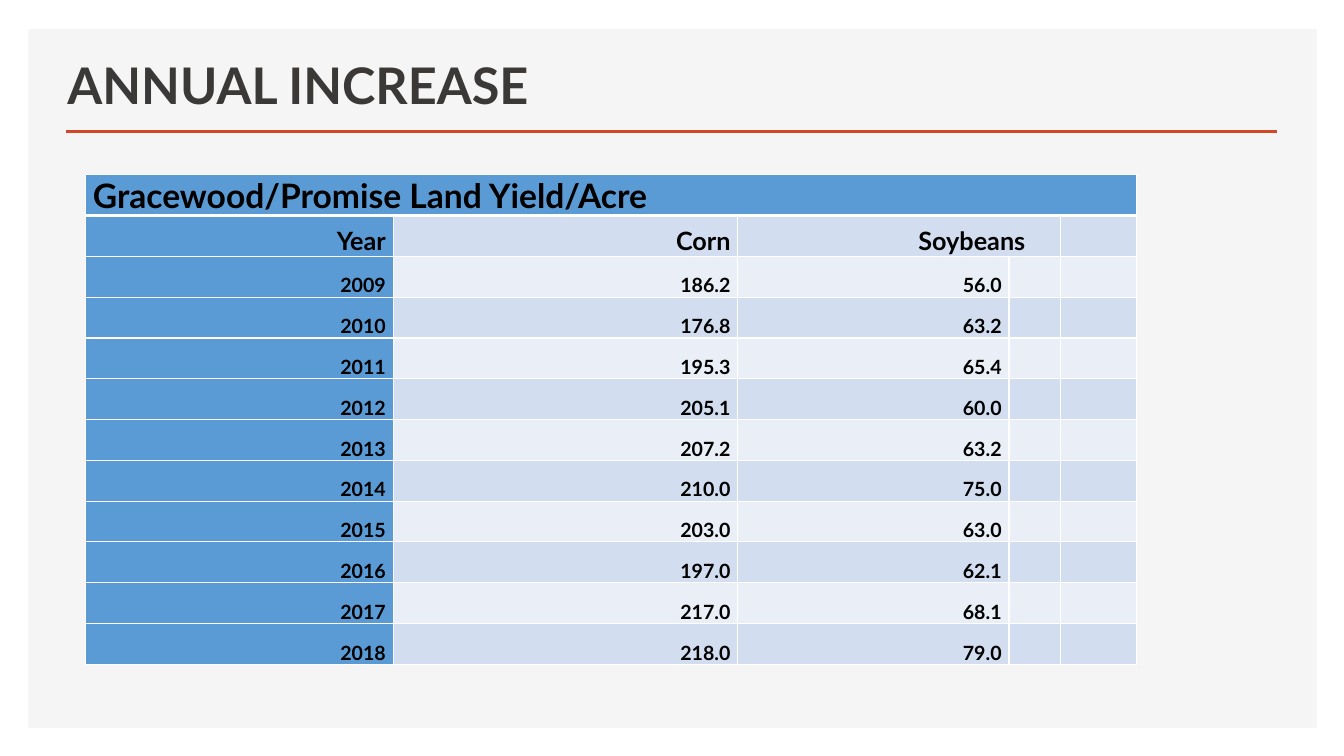
import pptx
import pptx.dml.color
import pptx.enum.shapes
import pptx.enum.text
import pptx.oxml
import pptx.oxml.ns
import pptx.util

Pt = pptx.util.Pt
ALIGN = pptx.enum.text.PP_ALIGN
ANCHOR = pptx.enum.text.MSO_ANCHOR
COLORS = {
    "panel": "F5F5F5",
    "rule": "D24726",
    "title": "3B3838",
    "text": "000000",
    "grid": "FFFFFF",
    "header": "5B9BD5",
    "band_dark": "D2DEEF",
    "band_light": "EAEFF7",
}
HEADING = "Gracewood/Promise Land Yield/Acre"
YIELDS = [
    ("Year", "Corn", "Soybeans"),
    ("2009", "186.2", "56.0"),
    ("2010", "176.8", "63.2"),
    ("2011", "195.3", "65.4"),
    ("2012", "205.1", "60.0"),
    ("2013", "207.2", "63.2"),
    ("2014", "210.0", "75.0"),
    ("2015", "203.0", "63.0"),
    ("2016", "197.0", "62.1"),
    ("2017", "217.0", "68.1"),
    ("2018", "218.0", "79.0"),
]
COLUMN_WIDTHS = [219.6, 246.2, 193.7, 36.7, 54.7]
ROW_HEIGHT = 29.16
CELL_FORMAT = {
    "vertical_anchor": ANCHOR.BOTTOM,
    "margin_left": Pt(5.2),
    "margin_right": Pt(5.2),
    "margin_top": 0,
    "margin_bottom": 0,
}


def rgb(name):
    return pptx.dml.color.RGBColor.from_string(COLORS[name])


def apply(target, values):
    for name, value in values.items():
        setattr(target, name, value)


def write(frame, text, size, color, align):
    frame.text = text
    paragraph = frame.paragraphs[0]
    paragraph.alignment = align
    font = paragraph.runs[0].font
    apply(font, {"name": "Lato", "size": Pt(size), "bold": True})
    font.color.rgb = rgb(color)


def add_panel(slide):
    panel = slide.shapes.add_shape(
        pptx.enum.shapes.MSO_SHAPE.RECTANGLE, Pt(20.2), Pt(20.9), Pt(920.2), Pt(499))
    panel.shadow.inherit = False
    panel.fill.solid()
    panel.fill.fore_color.rgb = rgb("panel")
    panel.line.fill.background()


def add_rule(slide):
    rule = slide.shapes.add_connector(
        pptx.enum.shapes.MSO_CONNECTOR.STRAIGHT, Pt(47.5), Pt(94), Pt(912.2), Pt(94))
    rule.line.width = Pt(2)
    rule.line.color.rgb = rgb("rule")
    properties = rule.element.find(pptx.oxml.ns.qn("p:spPr"))
    properties.append(pptx.oxml.parse_xml(
        f'<a:effectLst {pptx.oxml.ns.nsdecls("a")}/>'))
    return rule


def place_title(slide, rule):
    title = slide.shapes.title
    apply(title, {"left": Pt(41), "top": Pt(35.3), "width": Pt(541.4), "height": Pt(50.4)})
    apply(title.text_frame, {
        "vertical_anchor": ANCHOR.BOTTOM,
        "auto_size": pptx.enum.text.MSO_AUTO_SIZE.NONE,
        "word_wrap": True,
    })
    write(title.text_frame, "ANNUAL INCREASE", 36, "title", ALIGN.LEFT)
    rule.element.addnext(title.element)


def set_borders(cell, row):
    properties = cell._tc.get_or_add_tcPr()
    widths = {"L": 1, "R": 1, "T": 3 if row == 1 else 1, "B": 3 if row == 0 else 1}
    for side, width in widths.items():
        properties.append(pptx.oxml.parse_xml(
            f'<a:ln{side} {pptx.oxml.ns.nsdecls("a")} w="{Pt(width)}"><a:solidFill>'
            f'<a:srgbClr val="{COLORS["grid"]}"/></a:solidFill></a:ln{side}>'))


def format_cell(cell, row, column):
    apply(cell, CELL_FORMAT)
    set_borders(cell, row)
    if row == 0 or column == 0:
        fill = "header"
    else:
        fill = "band_dark" if row % 2 else "band_light"
    cell.fill.solid()
    cell.fill.fore_color.rgb = rgb(fill)


def add_yield_table(slide):
    row_count = len(YIELDS) + 1
    table = slide.shapes.add_table(
        row_count, len(COLUMN_WIDTHS), Pt(61.2), Pt(124.8),
        Pt(sum(COLUMN_WIDTHS)), Pt(ROW_HEIGHT * row_count)).table
    apply(table, {"first_row": False, "horz_banding": False})
    for column, width in zip(table.columns, COLUMN_WIDTHS):
        column.width = Pt(width)
    for row in range(row_count):
        table.rows[row].height = Pt(ROW_HEIGHT)
        for column in range(len(COLUMN_WIDTHS)):
            format_cell(table.cell(row, column), row, column)

    table.cell(0, 0).merge(table.cell(0, 4))
    write(table.cell(0, 0).text_frame, HEADING, 24, "text", ALIGN.LEFT)
    for row, values in enumerate(YIELDS, 1):
        for column, value in enumerate(values):
            write(table.cell(row, column).text_frame, value,
                  18 if row == 1 else 14, "text", ALIGN.RIGHT)
    soybeans = table.cell(1, 2)
    soybeans.merge(table.cell(1, 3))
    soybeans.margin_right = Pt(25)


def main():
    deck = pptx.Presentation()
    apply(deck, {"slide_width": Pt(960), "slide_height": Pt(540)})
    slide = deck.slides.add_slide(deck.slide_layouts[5])
    add_panel(slide)
    rule = add_rule(slide)
    place_title(slide, rule)
    add_yield_table(slide)
    deck.save("out.pptx")


if __name__ == "__main__":
    main()
